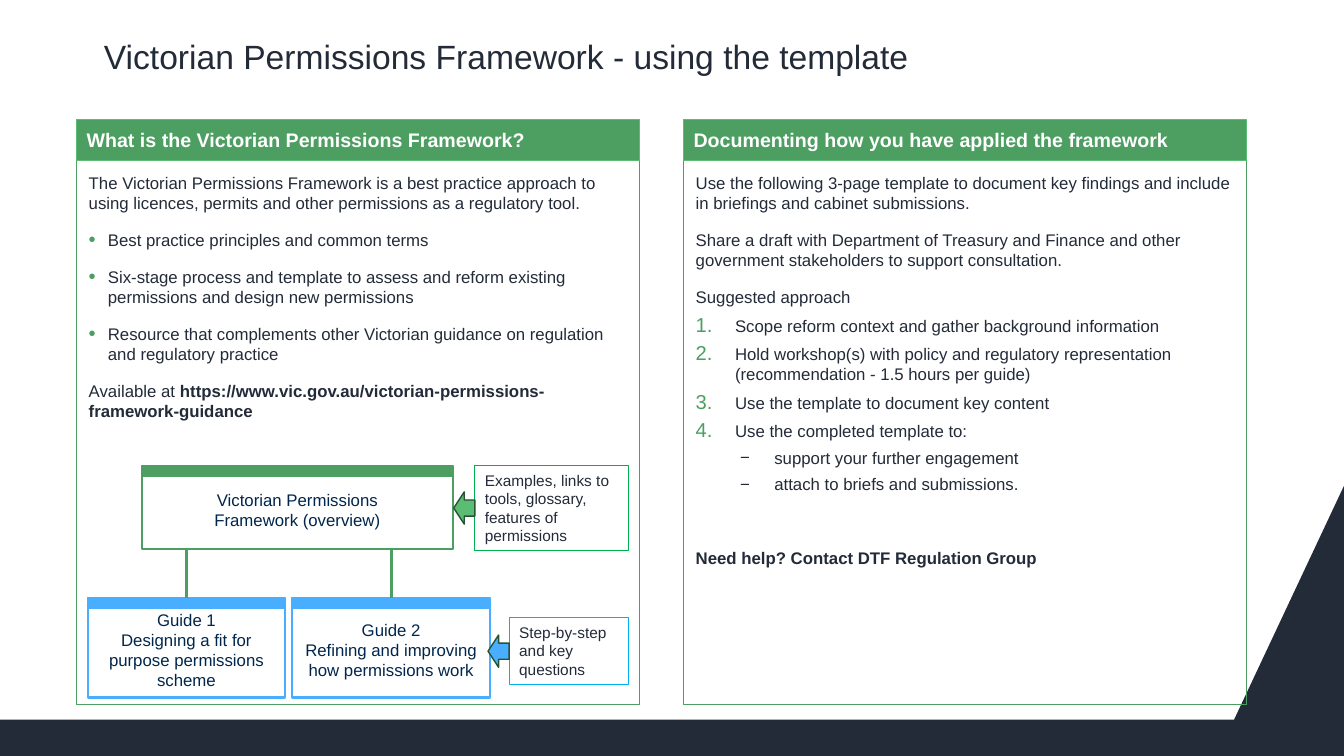
from pptx import Presentation
from pptx.dml.color import RGBColor
from pptx.enum.shapes import MSO_CONNECTOR, MSO_SHAPE
from pptx.enum.text import MSO_ANCHOR, MSO_AUTO_SIZE, PP_ALIGN
from pptx.oxml.ns import qn
from pptx.util import Inches, Pt
from lxml.etree import SubElement

NAVY, GREEN, BRIGHT_GREEN, BLUE = "232B39", "4C9E61", "5BBD74", "49AEFF"
WHITE, DIAGRAM_TEXT, ARROW_LINE = "FFFFFF", "00264D", "285333"

PLAIN = {"before": 6, "after": 6}
BULLET = {**PLAIN, "left": 0.19, "hang": 0.19, "character": "•", "scale": 120}
NUMBER = {"after": 6, "left": 0.39, "hang": 0.39, "numbered": True, "scale": 120}
DASH = {"after": 6, "left": 0.78, "hang": 0.34, "character": "−", "colour": NAVY,
        "level": 1, "line": 0.9}
CONTACT = {"before": 32, "after": 6}

FRAMEWORK = [
    (PLAIN, [("The Victorian Permissions Framework is a best practice approach to using "
              "licences, permits and other permissions as a regulatory tool.", False)]),
    (BULLET, [("Best practice principles and common terms", False)]),
    (BULLET, [("Six-stage process and template to assess and reform existing permissions "
               "and design new permissions", False)]),
    (BULLET, [("Resource that complements other Victorian guidance on regulation and "
               "regulatory practice", False)]),
    (PLAIN, [("Available at ", False),
             ("https://www.vic.gov.au/victorian-permissions-framework-guidance", True)]),
]
DOCUMENTING = [
    (PLAIN, [("Use the following 3-page template to document key findings and include in "
              "briefings and cabinet submissions.", False)]),
    (PLAIN, [("Share a draft with Department of Treasury and Finance and other government "
              "stakeholders to support consultation.", False)]),
    (PLAIN, [("Suggested approach", False)]),
    (NUMBER, [("Scope reform context and gather background information", False)]),
    (NUMBER, [("Hold workshop(s) with policy and regulatory representation "
               "(recommendation - 1.5 hours per guide)", False)]),
    (NUMBER, [("Use the template to document key content", False)]),
    (NUMBER, [("Use the completed template to:", False)]),
    (DASH, [("support your further engagement", False)]),
    (DASH, [("attach to briefs and submissions.", False)]),
    (CONTACT, [("Need help? Contact DTF Regulation Group", True)]),
]


def rgb(colour):
    """Turn a hex string into a colour."""
    return RGBColor.from_string(colour)


def set_attributes(target, values):
    """Set each named attribute of the target."""
    for name, value in values.items():
        setattr(target, name, value)


def place(shape, box):
    """Move a shape to a box given in inches."""
    set_attributes(shape, dict(zip(("left", "top", "width", "height"), map(Inches, box))))


def style(shape, fill, line, weight):
    """Give a shape its fill and outline."""
    if fill:
        shape.fill.solid()
        shape.fill.fore_color.rgb = rgb(fill)
    else:
        shape.fill.background()
    shape.line.color.rgb = rgb(line)
    shape.line.width = Pt(weight)


def add_box(slide, box, fill, line, weight, preset=MSO_SHAPE.RECTANGLE):
    """Add a styled preset shape."""
    shape = slide.shapes.add_shape(preset, *map(Inches, box))
    shape.shadow.inherit = False
    style(shape, fill, line, weight)
    return shape


def set_frame(shape, anchor, insets=(0.1, 0.05, 0.1, 0.05)):
    """Prepare the text frame of a shape."""
    frame = shape.text_frame
    set_attributes(frame, {"word_wrap": True, "auto_size": MSO_AUTO_SIZE.NONE,
                           "vertical_anchor": anchor})
    sides = ("margin_left", "margin_top", "margin_right", "margin_bottom")
    set_attributes(frame, dict(zip(sides, map(Inches, insets))))
    return frame


def set_font(font, size, colour, bold=False):
    """Format a font."""
    set_attributes(font, {"name": "Arial", "size": Pt(size), "bold": bold})
    font.color.rgb = rgb(colour)


def write(frame, text, size, colour, bold=False, align=PP_ALIGN.LEFT):
    """Write one uniform paragraph."""
    paragraph = frame.paragraphs[0]
    paragraph.text = text
    paragraph.alignment = align
    for run in paragraph.runs:
        set_font(run.font, size, colour, bold)
    return paragraph


def set_marker(paragraph, kind):
    """Set indents and the bullet or number of a paragraph."""
    properties = paragraph._p.get_or_add_pPr()
    properties.set("marL", str(Inches(kind.get("left", 0))))
    properties.set("indent", str(-Inches(kind.get("hang", 0))))
    if "hang" not in kind:
        SubElement(properties, qn("a:buNone"))
        return
    colour = SubElement(properties, qn("a:buClr"))
    SubElement(colour, qn("a:srgbClr"), val=kind.get("colour", GREEN))
    SubElement(properties, qn("a:buSzPct"), val=str(kind.get("scale", 100) * 1000))
    SubElement(properties, qn("a:buFont"), typeface="Arial")
    if "numbered" in kind:
        SubElement(properties, qn("a:buAutoNum"), type="arabicPeriod")
    else:
        SubElement(properties, qn("a:buChar"), char=kind["character"])


def write_list(frame, entries):
    """Write paragraphs of the given kinds."""
    for index, (kind, runs) in enumerate(entries):
        paragraph = frame.add_paragraph() if index else frame.paragraphs[0]
        set_attributes(paragraph, {
            "alignment": PP_ALIGN.LEFT, "level": kind.get("level", 0),
            "line_spacing": kind.get("line", 1.0),
            "space_before": Pt(kind.get("before", 0)), "space_after": Pt(kind["after"])})
        set_marker(paragraph, kind)
        for text, bold in runs:
            run = paragraph.add_run()
            run.text = text
            set_font(run.font, 12, NAVY, bold)


def add_backdrop(slide, width, height):
    """Draw the dark band and its rising corner behind everything."""
    band_top = 7.14
    points = [(0, band_top), (0, height), (width, height), (width, 4.82), (12.24, band_top)]
    corners = [(Inches(x), Inches(y)) for x, y in points]
    builder = slide.shapes.build_freeform(*corners[0])
    builder.add_line_segments(corners[1:], close=True)
    backdrop = builder.convert_to_shape()
    backdrop.shadow.inherit = False
    backdrop.fill.solid()
    backdrop.fill.fore_color.rgb = rgb(NAVY)
    backdrop.line.fill.background()
    slide.shapes._spTree.insert(2, backdrop._element)


def add_title(slide, box):
    """Fill the title placeholder."""
    title = slide.shapes.title
    place(title, box)
    frame = set_frame(title, MSO_ANCHOR.BOTTOM, (0.04, 0.05, 0.04, 0.05))
    text = "Victorian Permissions Framework - using the template"
    write(frame, text, 24, NAVY).line_spacing = 0.9


def add_panel(slide, box, heading, entries, placeholder=None):
    """Add a heading bar above an outlined list."""
    left, top, width, height = box
    bar_height = 0.4
    body_box = (left, top + bar_height, width, height - bar_height)
    body = placeholder or add_box(slide, body_box, None, GREEN, 0.75)
    place(body, body_box)
    style(body, None, GREEN, 0.75)
    write_list(set_frame(body, MSO_ANCHOR.TOP, (0.12,) * 4), entries)
    bar = add_box(slide, (left, top, width, bar_height), GREEN, BRIGHT_GREEN, 0.75)
    write(set_frame(bar, MSO_ANCHOR.MIDDLE), heading, 14, WHITE, True)


def add_card(slide, box, text, colour):
    """Add a white card with a coloured top strip."""
    card = add_box(slide, box, WHITE, colour, 1.5)
    frame = set_frame(card, MSO_ANCHOR.MIDDLE, (0.12, 0.16, 0.12, 0.12))
    write(frame, text, 12, DIAGRAM_TEXT, align=PP_ALIGN.CENTER)
    add_box(slide, (*box[:3], 0.1), colour, colour, 1.5)
    return card


def add_callout(slide, box, text, line, arrow_fill):
    """Add a note with an arrow pointing left from it."""
    left, top, _, height = box
    note = add_box(slide, box, None, line, 0.75)
    write(set_frame(note, MSO_ANCHOR.TOP), text, 11, NAVY)
    arrow_box = (left - 0.21, top + height / 2 - 0.16, 0.21, 0.32)
    add_box(slide, arrow_box, arrow_fill, ARROW_LINE, 1, MSO_SHAPE.LEFT_ARROW)


def add_diagram(slide, left, top):
    """Add the overview, its two guides and their notes."""
    guides = ["Guide 1\nDesigning a fit for purpose permissions scheme",
              "Guide 2\nRefining and improving how permissions work"]
    guide_top, guide_width, pitch = top + 1.31, 1.96, 2.03
    overview_bottom = top + 0.83
    for index, text in enumerate(guides):
        guide_left = left + index * pitch
        guide = add_card(slide, (guide_left, guide_top, guide_width, 0.99), text, BLUE)
        middle = Inches(guide_left + guide_width / 2)
        link = slide.shapes.add_connector(MSO_CONNECTOR.STRAIGHT, middle,
                                          Inches(overview_bottom), middle, Inches(guide_top))
        link.end_connect(guide, 0)
        link.line.color.rgb = rgb(GREEN)
        link.line.width = Pt(2)
        SubElement(link._element.spPr, qn("a:effectLst"))
    add_card(slide, (left + 0.54, top, 3.08, 0.83),
             "Victorian Permissions\nFramework (overview)", GREEN)
    add_callout(slide, (left + 3.84, top, 1.52, 0.84),
                "Examples, links to tools, glossary, features of permissions",
                "00B050", BRIGHT_GREEN)
    add_callout(slide, (left + 4.18, top + 1.51, 1.18, 0.66),
                "Step-by-step and key questions", "00B0F0", BLUE)


def main():
    """Build and save the slide."""
    width, height = 13.33, 7.5
    presentation = Presentation()
    set_attributes(presentation, {"slide_width": Inches(width), "slide_height": Inches(height)})
    slide = presentation.slides.add_slide(presentation.slide_layouts[1])
    add_backdrop(slide, width, height)
    add_title(slide, (0.99, 0.25, 11.5, 0.56))
    add_panel(slide, (6.78, 1.19, 5.58, 5.8), "Documenting how you have applied the framework",
              DOCUMENTING, slide.placeholders[1])
    add_panel(slide, (0.76, 1.19, 5.58, 5.8), "What is the Victorian Permissions Framework?",
              FRAMEWORK)
    add_diagram(slide, 0.87, 4.62)
    presentation.save("out.pptx")


if __name__ == "__main__":
    main()
